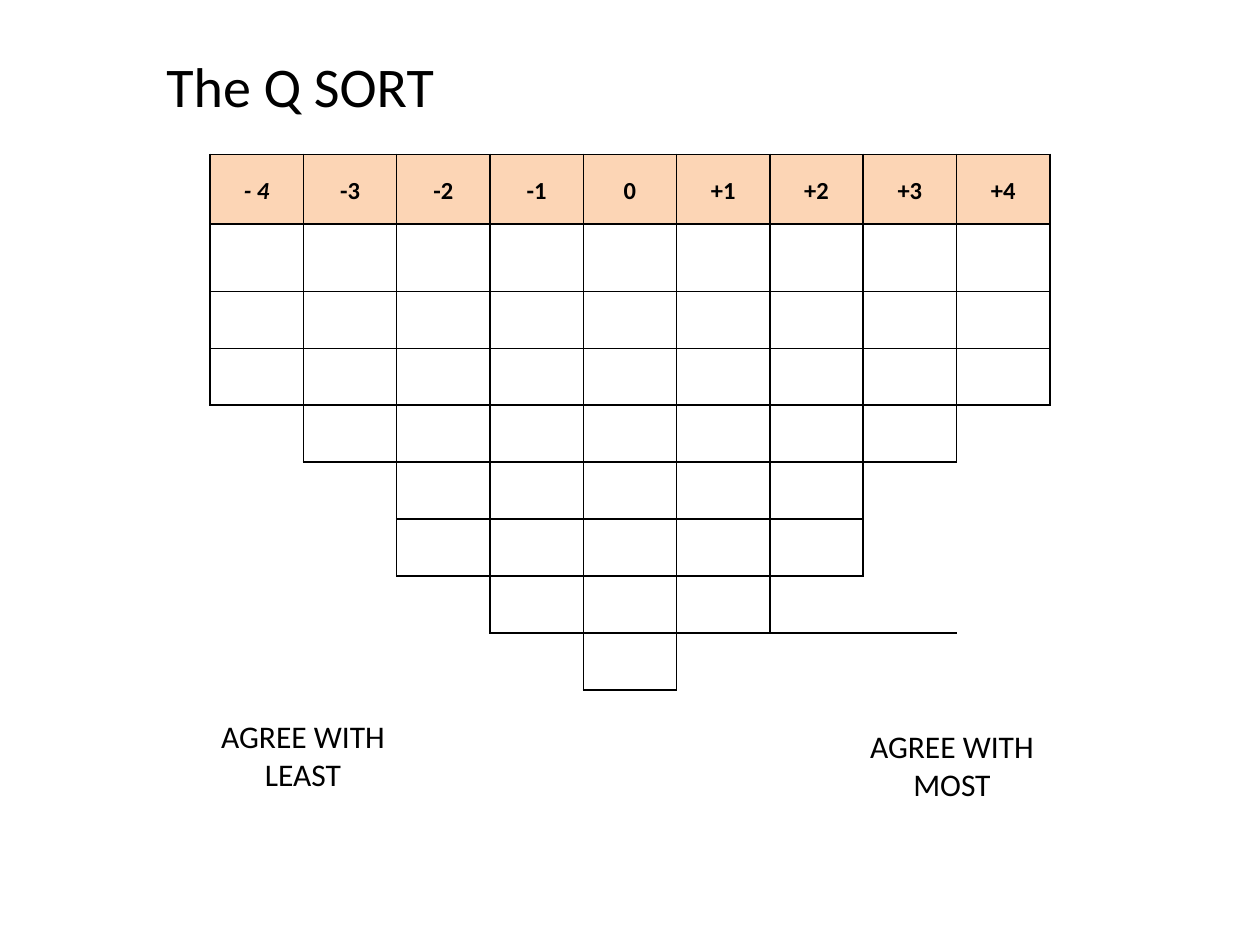
"""Build the Q sort slide: a scored header row above a stepped answer grid."""
from dataclasses import dataclass

from lxml.etree import SubElement
from pptx import Presentation
from pptx.dml.color import RGBColor as Color
from pptx.enum.text import MSO_ANCHOR as Anchor, PP_ALIGN as Align
from pptx.oxml.ns import qn
from pptx.util import Emu, Inches, Pt


@dataclass(frozen=True)
class Theme:
    font: str = "Calibri"
    ink: str = "000000"
    header_fill: str = "FCD5B5"
    title_size: int = 32
    label_size: int = 18
    score_size: int = 14
    border_width: int = 1


THEME = Theme()
SCORES = ["- 4", "-3", "-2", "-1", "0", "+1", "+2", "+3", "+4"]
COLUMN_DEPTHS = [3, 4, 6, 7, 8, 7, 6, 4, 3]
GRID_LEFT, GRID_WIDTH = 16.67, 66.67
HEADER_TOP, HEADER_HEIGHT = 16.33, 7.4
ROW_HEIGHTS = [7.1] + [6.03] * 7
ALL_SIDES = "LRTB"


def write_text(frame, text, *, size, align=Align.LEFT, bold=False, italic=False, spacing=None):
    paragraph = frame.paragraphs[0]
    paragraph.alignment = align
    paragraph.line_spacing = spacing
    run = paragraph.add_run()
    run.text = text
    font = run.font
    font.name, font.size, font.bold, font.italic = THEME.font, Pt(size), bold, italic
    font.color.rgb = Color.from_string(THEME.ink)


def set_borders(cell, sides):
    properties = cell._tc.get_or_add_tcPr()
    for side in ALL_SIDES:
        line = SubElement(properties, qn(f"a:ln{side}"), w=str(Pt(THEME.border_width)))
        if side in sides:
            fill = SubElement(line, qn("a:solidFill"))
            SubElement(fill, qn("a:srgbClr"), val=THEME.ink)
        else:
            SubElement(line, qn("a:noFill"))


def stepped_sides(row, column):
    def is_open(position):
        return 0 <= position < len(COLUMN_DEPTHS) and row < COLUMN_DEPTHS[position]

    if is_open(column):
        return ALL_SIDES
    left = "L" if is_open(column - 1) else ""
    right = "R" if is_open(column + 1) else ""
    top = "T" if row == COLUMN_DEPTHS[column] else ""
    return left + right + top


class SlideBuilder:
    def __init__(self, presentation, theme):
        self.theme = theme
        self.width, self.height = presentation.slide_width, presentation.slide_height
        self.slide = presentation.slides.add_slide(presentation.slide_layouts[5])

    def box(self, left, top, width, height):
        return (Emu(int(self.width * left / 100)), Emu(int(self.height * top / 100)),
                Emu(int(self.width * width / 100)), Emu(int(self.height * height / 100)))

    def title(self, text, *area):
        shape = self.slide.shapes.title
        shape.left, shape.top, shape.width, shape.height = self.box(*area)
        shape.text_frame.vertical_anchor = Anchor.TOP
        write_text(shape.text_frame, text, size=self.theme.title_size)

    def label(self, text, *area):
        frame = self.slide.shapes.add_textbox(*self.box(*area)).text_frame
        frame.word_wrap = True
        write_text(frame, text, size=self.theme.label_size, align=Align.CENTER)

    def table(self, top, row_heights):
        area = self.box(GRID_LEFT, top, GRID_WIDTH, sum(row_heights))
        table = self.slide.shapes.add_table(len(row_heights), len(SCORES), *area).table
        table.first_row = table.horz_banding = False
        for row, height in zip(table.rows, row_heights):
            row.height = Emu(int(self.height * height / 100))
        return table

    def header(self):
        table = self.table(HEADER_TOP, [HEADER_HEIGHT])
        for column, score in enumerate(SCORES):
            cell = table.cell(0, column)
            set_borders(cell, ALL_SIDES)
            cell.fill.solid()
            cell.fill.fore_color.rgb = Color.from_string(self.theme.header_fill)
            cell.vertical_anchor = Anchor.MIDDLE
            cell.margin_left = cell.margin_right = Inches(0.05)
            cell.margin_top = cell.margin_bottom = 0
            write_text(cell.text_frame, score, size=self.theme.score_size, align=Align.CENTER,
                       bold=True, italic=column == 0, spacing=1.15)

    def answer_grid(self):
        table = self.table(HEADER_TOP + HEADER_HEIGHT, ROW_HEIGHTS)
        last_row = len(ROW_HEIGHTS) - 1
        merged_columns = range(5, 8)
        for row in range(len(ROW_HEIGHTS)):
            for column in range(len(SCORES)):
                cell = table.cell(row, column)
                merged = row == last_row and column in merged_columns
                set_borders(cell, stepped_sides(row, column) + ("T" if merged else ""))
                cell.fill.background()
        table.cell(last_row, merged_columns[0]).merge(table.cell(last_row, merged_columns[-1]))


def main():
    presentation = Presentation()
    presentation.slide_width, presentation.slide_height = Inches(10), Inches(7.5)
    builder = SlideBuilder(presentation, THEME)
    builder.header()
    builder.answer_grid()
    builder.label("AGREE WITH MOST", 66.5, 76.27, 18.1, 9.47)
    builder.label("AGREE WITH LEAST", 15.4, 75.2, 17.3, 9.47)
    builder.title("The Q SORT", 12.2, 4.8, 27.6, 8.53)
    presentation.save("out.pptx")


if __name__ == "__main__":
    main()
